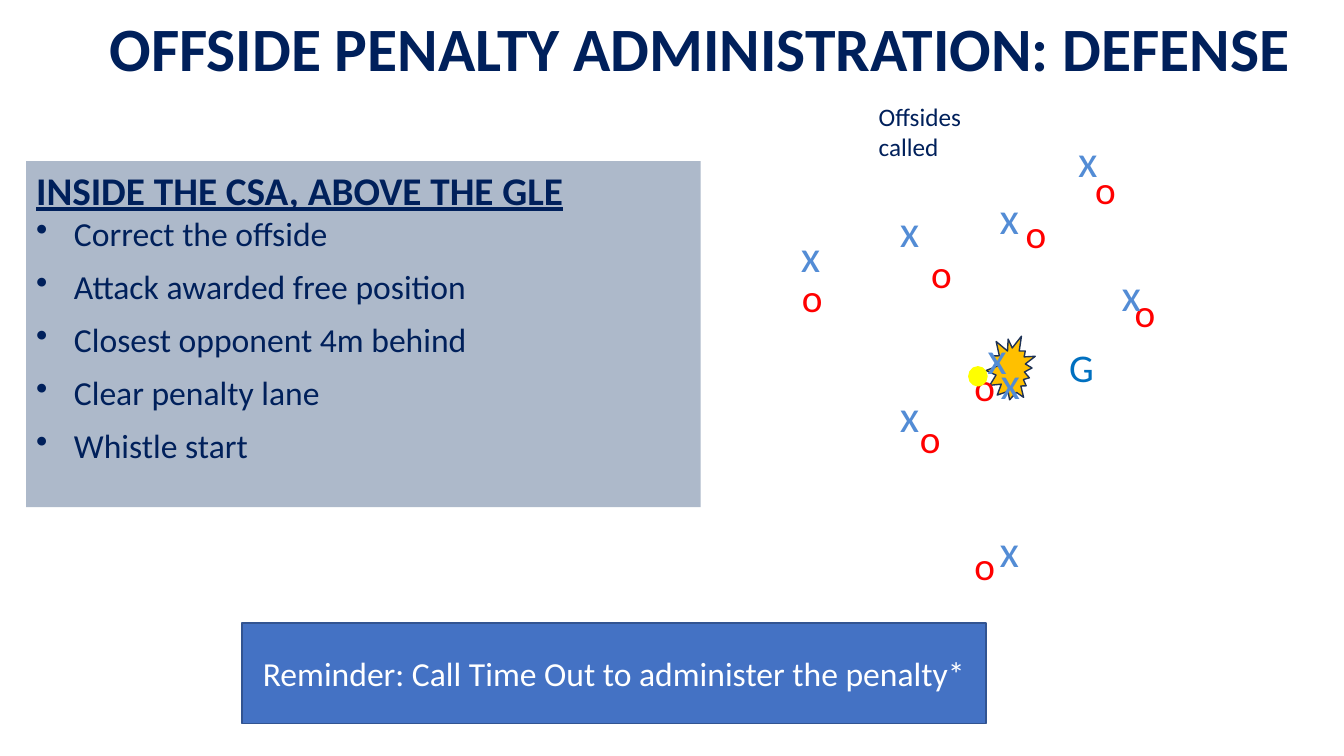
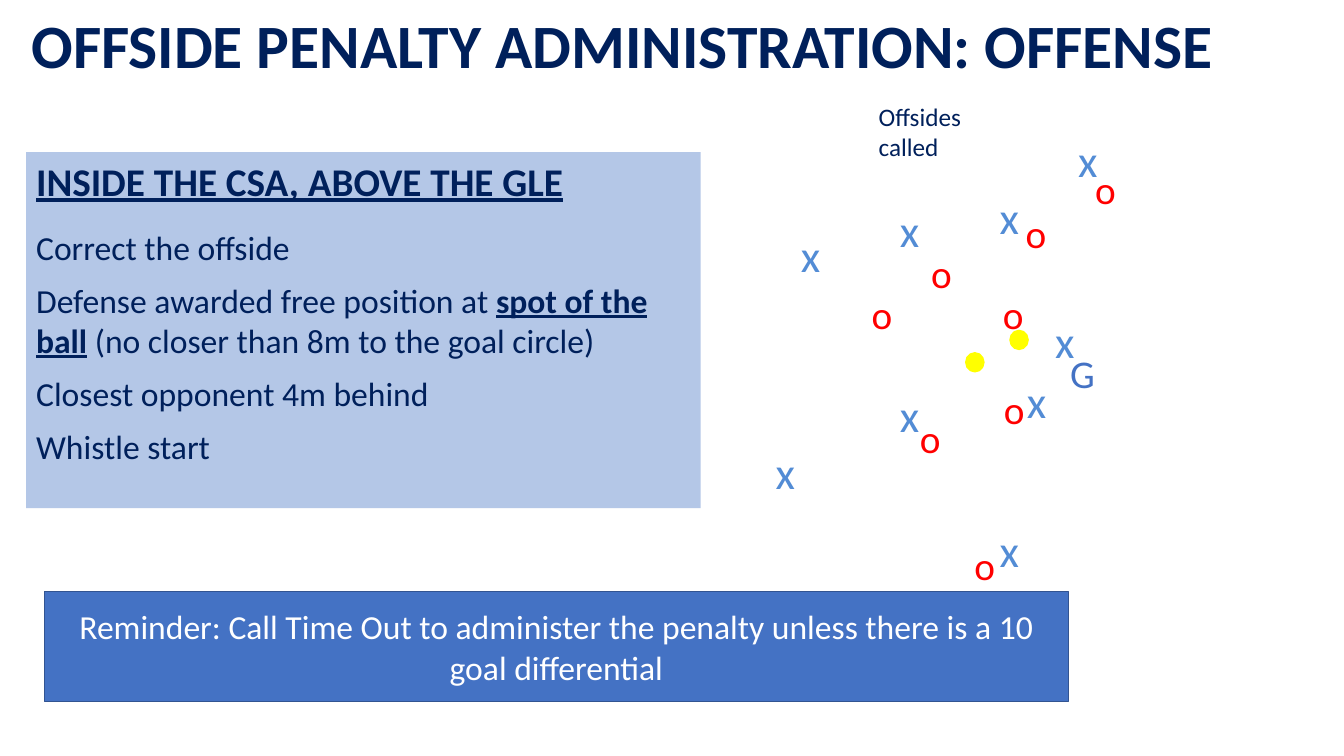
from pptx import Presentation
from pptx.dml.color import RGBColor
from pptx.enum.shapes import MSO_SHAPE as Preset
from pptx.enum.text import MSO_ANCHOR as Anchor, PP_ALIGN as Align
from pptx.oxml.xmlchemy import OxmlElement
from pptx.util import Pt

FONT = "Calibri"
NAVY, WHITE = "00205B", "FFFFFF"
BANNER_FILL, BANNER_LINE = "4472C4", "325491"
ATTACK, DEFENSE, BALL = "538CD5", "FF0000", "FFFF00"
HEADING = "INSIDE THE CSA, ABOVE THE GLE"

# Field positions are measured from the corner of the field.
FIELD = (547, 69)
SHARED_ATTACK = [(18, 90), (160, 62.6), (88.6, 204.5), (216, 22.3),
                 (160, 301), (88.6, 72)]
SHARED_DEFENSE = [(111, 105.8), (228.2, 45.4), (103, 223.2), (142, 314),
                  (178.6, 77)]


def color(hex_code):
    return RGBColor.from_string(hex_code)


def style(paragraph, size, ink, bold=False, underline=False):
    font = paragraph.font
    font.name, font.size = FONT, Pt(size)
    font.bold, font.underline = bold, underline
    font.color.rgb = color(ink)


def add_bullet(paragraph, indent=27):
    properties = paragraph._p.get_or_add_pPr()
    properties.set("marL", str(Pt(indent)))
    properties.set("indent", str(-Pt(indent)))
    bullet = OxmlElement("a:buChar")
    bullet.set("char", "•")
    properties.append(bullet)


def add_filled(slide, preset, box, fill, line=None):
    shape = slide.shapes.add_shape(preset, *map(Pt, box))
    shape.shadow.inherit = False
    shape.fill.solid()
    shape.fill.fore_color.rgb = color(fill)
    if line:
        shape.line.color.rgb = color(line)
        shape.line.width = Pt(1)
    else:
        shape.line.fill.background()
    return shape


def add_label(slide, box, text, size, ink, bold=False):
    frame = slide.shapes.add_textbox(*map(Pt, box)).text_frame
    frame.word_wrap = True
    paragraph = frame.paragraphs[0]
    paragraph.text = text
    style(paragraph, size, ink, bold)
    return paragraph


def add_title(slide, box, text):
    title = add_label(slide, box, text, 44, NAVY, bold=True)
    title.alignment = Align.CENTER
    title.line_spacing = 0.9


def add_rules(slide, box, fill, rules, first_gap, bulleted):
    """Panel of rules; each rule is a list of (text, emphasized) parts."""
    frame = add_filled(slide, Preset.RECTANGLE, box, fill).text_frame
    frame.word_wrap = True
    frame.vertical_anchor = Anchor.TOP
    heading = frame.paragraphs[0]
    heading.text = HEADING
    heading.alignment = Align.LEFT
    style(heading, 28, NAVY, bold=True, underline=True)
    for index, parts in enumerate(rules):
        rule = frame.add_paragraph()
        rule.alignment = Align.LEFT
        rule.space_before = Pt(9 if index else first_gap)
        if bulleted:
            add_bullet(rule)
        style(rule, 24, NAVY)
        for text, emphasized in parts:
            run = rule.add_run()
            run.text = text
            if emphasized:
                run.font.bold = run.font.underline = True


def add_reminder(slide, box, text):
    banner = add_filled(slide, Preset.RECTANGLE, box, BANNER_FILL, BANNER_LINE)
    frame = banner.text_frame
    frame.word_wrap = True
    frame.vertical_anchor = Anchor.MIDDLE
    paragraph = frame.paragraphs[0]
    paragraph.text = text
    paragraph.alignment = Align.CENTER
    style(paragraph, 24, WHITE)


def add_field(slide, corner, attack, defense, goalie, goalie_ink, balls,
              collision=None):
    left, top = corner

    def on_field(spot, width, height):
        return left + spot[0], top + spot[1], width, height

    if collision:
        burst = add_filled(slide, Preset.EXPLOSION2,
                           on_field(collision, 44, 39.6), "FFC000", "1E3256")
        burst.rotation = 306.9
    add_label(slide, on_field((73.6, 0), 75, 51), "Offsides called", 18, NAVY)
    for spot in SHARED_DEFENSE + defense:
        add_label(slide, on_field(spot, 31, 41), "o", 28, DEFENSE)
    for spot in SHARED_ATTACK + attack:
        add_label(slide, on_field(spot, 32, 46), "x", 32, ATTACK)
    add_label(slide, on_field(goalie, 39, 41), "G", 28, goalie_ink)
    for spot in balls:
        add_filled(slide, Preset.OVAL, on_field(spot, 13, 13.6), BALL, BALL)


def build_defense(slide):
    add_title(slide, (68.4, 9.4, 864, 80),
              "OFFSIDE PENALTY ADMINISTRATION: DEFENSE")
    rules = ["Correct the offside", "Attack awarded free position",
             "Closest opponent 4m behind", "Clear penalty lane",
             "Whistle start"]
    add_rules(slide, (18.7, 115.2, 481.7, 247), "ADB9CA",
              [[(rule, False)] for rule in rules], first_gap=0, bulleted=True)
    add_reminder(slide, (172.8, 445, 531.4, 72),
                 "Reminder: Call Time Out to administer the penalty*")
    add_field(slide, FIELD,
              attack=[(151.2, 162.7), (247, 118), (160.6, 180.7)],
              defense=[(256.4, 133.2), (142, 186.5), (18.8, 123)],
              goalie=(209.6, 172.8), goalie_ink="0070C0",
              balls=[(145, 193)], collision=(153.5, 173.5))


def build_offense(slide):
    add_title(slide, (13, 7.2, 864, 80),
              "OFFSIDE PENALTY ADMINISTRATION: OFFENSE")
    rules = [[("Correct the offside", False)],
             [("Defense awarded free position at ", False),
              ("spot of the ball", True),
              (" (no closer than 8m to the goal circle)", False)],
             [("Closest opponent 4m behind", False)],
             [("Whistle start", False)]]
    add_rules(slide, (18.7, 108.7, 481.7, 254.2), "B4C7E7", rules,
              first_gap=16, bulleted=False)
    add_reminder(slide, (31.7, 422.6, 731.5, 78.5),
                 "Reminder: Call Time Out to administer the penalty "
                 "unless there is a 10 goal differential")
    add_field(slide, FIELD,
              attack=[(179.4, 194.4), (199.6, 151.2), (0, 245)],
              defense=[(162.2, 134.6), (163, 203), (68.6, 134.6)],
              goalie=(210.4, 177), goalie_ink="4472C4",
              balls=[(174.4, 167), (142.8, 183)])


def main():
    deck = Presentation()
    deck.slide_width, deck.slide_height = Pt(960), Pt(540)
    for build in (build_defense, build_offense):
        build(deck.slides.add_slide(deck.slide_layouts[6]))
    deck.save("out.pptx")


if __name__ == "__main__":
    main()
